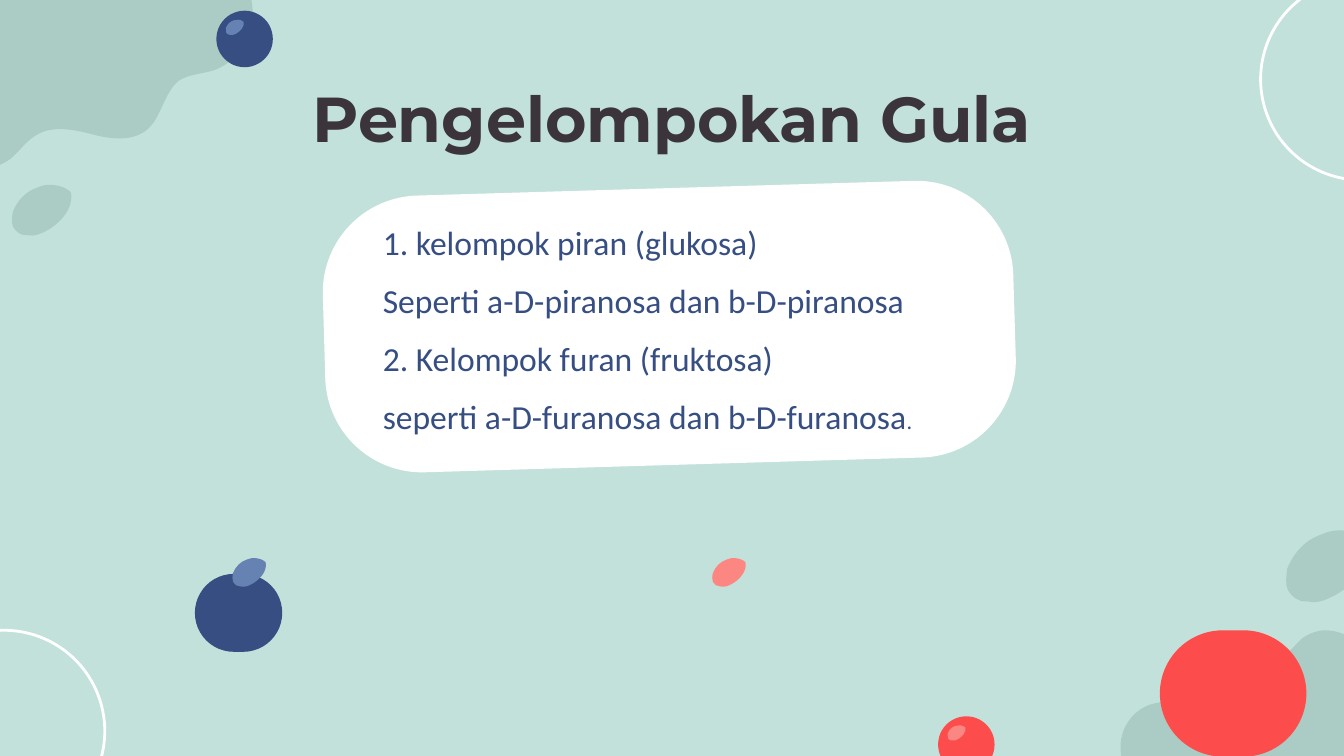
from pptx import Presentation, util as u
from pptx.dml.color import RGBColor
from pptx.enum import shapes as s, text as t
from pptx.oxml import ns, xmlchemy as x

PX = u.Inches(1) // 100
MINT = RGBColor(0xC2, 0xE1, 0xDA)
SAGE = RGBColor(0xAA, 0xCC, 0xC4)
NAVY = RGBColor(0x36, 0x4E, 0x82)
BLUE = RGBColor(0x65, 0x82, 0xB2)
RED = RGBColor(0xFC, 0x4C, 0x4C)
PINK = RGBColor(0xFC, 0x87, 0x82)
WHITE = RGBColor(0xFF, 0xFF, 0xFF)
DARK = RGBColor(0x3B, 0x34, 0x3B)

LEAF_WIDTH, BLOB_WIDTH = 65, 261
LEAF = [
    (41, 0), (35, 0), (30, 1), (25, 4), (13, 9), (5, 19), (1, 32),
    (1, 37), (0, 43), (3, 48), (6, 52), (11, 56), (17, 55),
    (18, 55), (19, 55), (19, 55), (26, 56), (33, 52), (39, 48),
    (52, 39), (65, 22), (60, 6), (55, 2), (48, 0), (41, 0),
]
BLOB = [
    (2, 126), (0, 116), (1, 106), (5, 97), (10, 86), (19, 78), (29, 74),
    (38, 71), (48, 71), (56, 66), (67, 57), (69, 39), (79, 30),
    (85, 25), (92, 23), (100, 23), (106, 23), (113, 24), (120, 26),
    (128, 28), (136, 30), (145, 30), (150, 30), (156, 29), (161, 26),
    (169, 22), (174, 14), (181, 8), (188, 3), (196, 0), (204, 0),
    (215, 0), (226, 4), (235, 12), (250, 25), (258, 46), (259, 67),
    (261, 86), (245, 106), (241, 126),
]
LINES = [
    ["1. kelompok piran (glukosa)"],
    ["Seperti a-D-piranosa dan b-D-piranosa"],
    ["2. Kelompok furan (fruktosa)"],
    ["seperti a-D-furanosa dan b-D-furanosa", "."],
]


def px(*lengths):
    """Turn px lengths into EMU."""
    return [u.Emu(round(length * PX)) for length in lengths]


def paint(shape, color):
    """Give a shape a flat fill without line or shadow."""
    shape.shadow.inherit = False
    shape.fill.solid()
    shape.fill.fore_color.rgb = color
    shape.line.fill.background()


def curve_segments(shape):
    """Turn every three line segments of a freeform into one cubic curve."""
    segments = list(shape.element.iter(ns.qn("a:lnTo")))
    for start in range(0, len(segments), 3):
        curve = x.OxmlElement("a:cubicBezTo")
        segments[start].addprevious(curve)
        for segment in segments[start:start + 3]:
            curve.append(segment[0])
            segment.getparent().remove(segment)


def add_outline(shapes, controls, left, top, scale, color, rotation=0):
    """Draw a closed outline of cubic curves."""
    points = [px(left + across * scale, top + down * scale) for across, down in controls]
    builder = shapes.build_freeform(*points[0], scale=1.0)
    builder.add_line_segments(points[1:], close=True)
    shape = builder.convert_to_shape()
    curve_segments(shape)
    paint(shape, color)
    shape.rotation = rotation


def add_leaf(shapes, left, top, width, color):
    """Draw a slightly turned leaf of the given width."""
    add_outline(shapes, LEAF, left, top, width / LEAF_WIDTH, color, 5)


def add_blob(shapes, left, top, width, rotation=0):
    """Draw a wavy corner blob of the given width."""
    add_outline(shapes, BLOB, left, top, width / BLOB_WIDTH, SAGE, rotation)


def add_preset(shapes, kind, box, color):
    """Draw a filled preset shape."""
    shape = shapes.add_shape(kind, *px(*box))
    paint(shape, color)
    return shape


def add_berry(slide, left, top, color, shine):
    """Draw a grouped round berry with a highlight."""
    shapes = slide.shapes.add_group_shape().shapes
    add_preset(shapes, s.MSO_SHAPE.OVAL, (left, top, 42, 42), color)
    add_leaf(shapes, left + 7, top + 6.5, 14, shine)


def add_ring(slide, left, top):
    """Draw a white ring."""
    ring = add_preset(slide.shapes, s.MSO_SHAPE.OVAL, (left, top, 150, 150), WHITE)
    ring.fill.background()
    ring.line.color.rgb = WHITE
    ring.line.width = u.Pt(1.5)


def add_rounded(slide, box, color, radius):
    """Draw a rounded rectangle."""
    shape = add_preset(slide.shapes, s.MSO_SHAPE.ROUNDED_RECTANGLE, box, color)
    shape.adjustments[0] = radius
    return shape


def format_frame(frame):
    """Set wrapping, insets and top anchor."""
    frame.word_wrap = True
    frame.auto_size = t.MSO_AUTO_SIZE.NONE
    frame.vertical_anchor = t.MSO_ANCHOR.TOP
    frame.margin_left, frame.margin_top, frame.margin_right, frame.margin_bottom = px(10, 10, 10, 10)


def format_run(run, name, size, color, bold=False):
    """Set the font of a run."""
    run.font.name, run.font.size, run.font.bold = name, u.Pt(size), bold
    run.font.color.rgb = color


def add_backdrop(slide):
    """Place the blobs, leaves, berries and rings at the slide edges."""
    add_leaf(slide.shapes, 9, 137, 46, SAGE)
    add_blob(slide.shapes, -72, 0, 261, 180)
    add_leaf(slide.shapes, 957, 394, 65, SAGE)
    add_blob(slide.shapes, 833, 469, 196)
    add_berry(slide, 161, 8, NAVY, BLUE)
    add_berry(slide, 698, 533, RED, PINK)
    add_ring(slide, -72, 469)
    add_ring(slide, 938, -16)


def add_title(slide, box):
    """Fill and place the title."""
    title = slide.shapes.title
    title.left, title.top, title.width, title.height = px(*box)
    title.text_frame.text = "Pengelompokan Gula"
    format_frame(title.text_frame)
    paragraph = title.text_frame.paragraphs[0]
    paragraph.alignment = t.PP_ALIGN.CENTER
    format_run(paragraph.runs[0], "Montserrat", 34, DARK, True)


def add_card(slide, left, top):
    """Place the tilted white card and its text."""
    card = add_rounded(slide, (left, top, 514, 206), WHITE, 0.35)
    card.rotation = 358.3
    frame = slide.shapes.add_textbox(*px(left + 34, top + 13, 446, 141)).text_frame
    format_frame(frame)
    for index, pieces in enumerate(LINES):
        paragraph = frame.add_paragraph() if index else frame.paragraphs[0]
        paragraph.line_spacing = 1.07
        paragraph.space_after = u.Pt(8)
        for piece, size in zip(pieces, (18, 12)):
            run = paragraph.add_run()
            run.text = piece
            format_run(run, "Calibri", size, NAVY)


def add_fruits(slide):
    """Place the large fruits and the small leaves."""
    add_rounded(slide, (145, 427, 65, 58), NAVY, 0.5)
    add_leaf(slide.shapes, 173, 415, 26, BLUE)
    add_rounded(slide, (863, 469, 109, 94), RED, 0.5)
    add_leaf(slide.shapes, 530, 415, 26, PINK)


def main():
    """Build the slide and save it."""
    presentation = Presentation()
    presentation.slide_width = u.Inches(10)
    presentation.slide_height = u.Inches(5.625)
    slide = presentation.slides.add_slide(presentation.slide_layouts[5])
    slide.background.fill.solid()
    slide.background.fill.fore_color.rgb = MINT
    add_backdrop(slide)
    add_title(slide, (79, 49, 842, 63))
    add_card(slide, 241, 140)
    add_fruits(slide)
    presentation.save("out.pptx")


if __name__ == "__main__":
    main()
